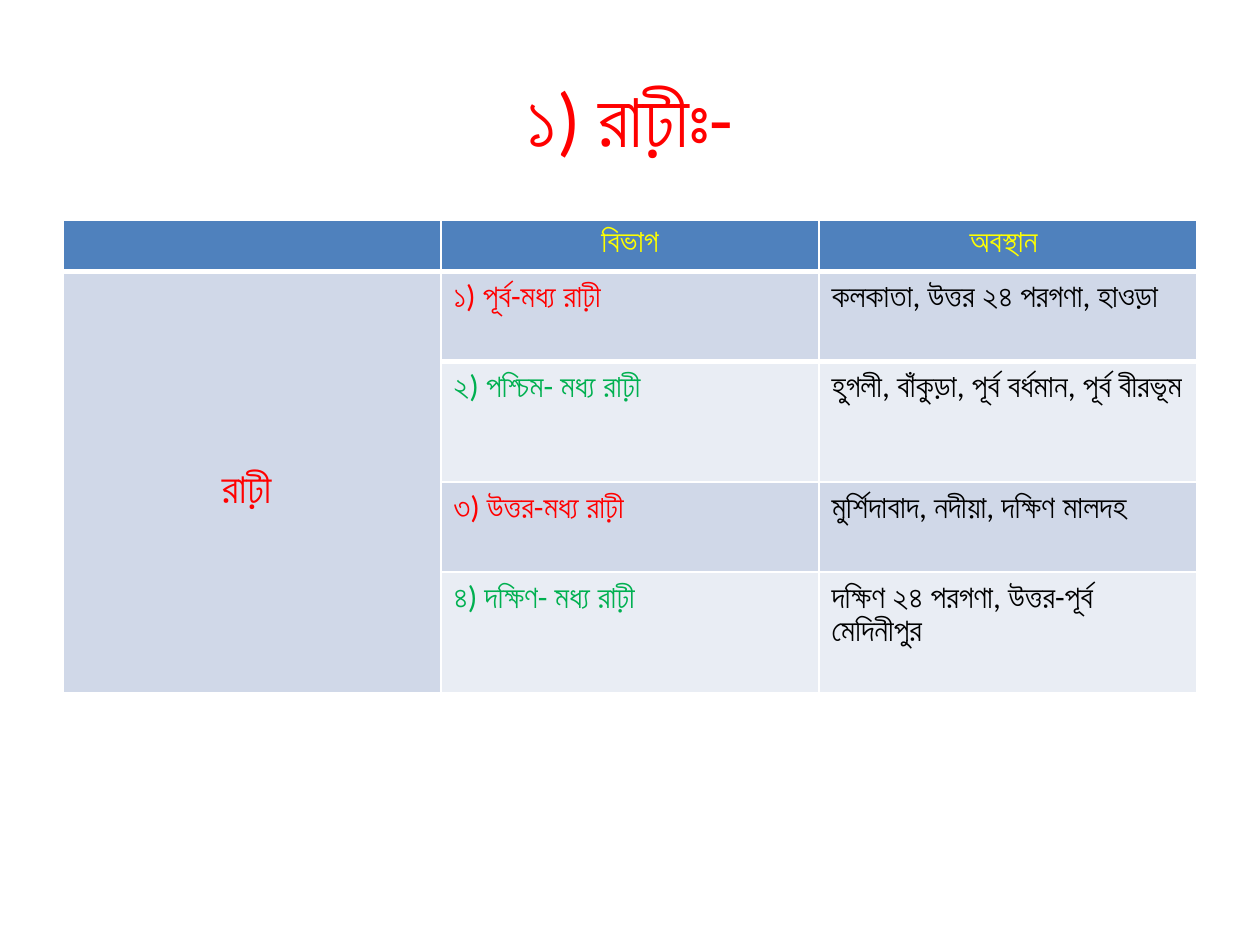
from pptx import Presentation
from pptx.dml.color import RGBColor
from pptx.enum.text import MSO_ANCHOR as Anchor, PP_ALIGN as Align
from pptx.oxml import parse_xml
from pptx.oxml.ns import nsdecls
from pptx.util import Pt

RED = RGBColor(0xFF, 0x00, 0x00)
GREEN = RGBColor(0x00, 0xB0, 0x50)
YELLOW = RGBColor(0xFF, 0xFF, 0x00)
BLACK = RGBColor(0x00, 0x00, 0x00)
WHITE = RGBColor(0xFF, 0xFF, 0xFF)
HEADER_BLUE = RGBColor(0x4F, 0x81, 0xBD)
BANDS = (RGBColor(0xD0, 0xD8, 0xE8), RGBColor(0xE9, 0xED, 0xF4))

LEFT, WIDTH = 36, 648
TABLE_TOP = 126
ROW_HEIGHTS = (29.2, 51.3, 69, 51.3, 69)

# Bengali letters that have a single code point for letter plus nukta
NUKTA = chr(0x09BC)
DOTTED_LETTERS = {chr(0x09A1): chr(0x09DC), chr(0x09A2): chr(0x09DD),
                  chr(0x09AF): chr(0x09DF)}

HEADINGS = ("", "বিভাগ", "অবস্থান ")
DIALECTS = (
    ("১) পূর্ব-মধ্য রাঢ়ী", "কলকাতা, উত্তর ২৪ পরগণা, হাওড়া"),
    ("২) পশ্চিম- মধ্য রাঢ়ী", "হুগলী, বাঁকুড়া, পূর্ব বর্ধমান, পূর্ব বীরভূম"),
    ("৩) উত্তর-মধ্য রাঢ়ী", "মুর্শিদাবাদ, নদীয়া, দক্ষিণ মালদহ"),
    ("৪) দক্ষিণ- মধ্য রাঢ়ী", "দক্ষিণ ২৪ পরগণা, উত্তর-পূর্ব মেদিনীপুর"),
)


def compose(text):
    for letter, dotted in DOTTED_LETTERS.items():
        text = text.replace(letter + NUKTA, dotted)
    return text


def write(frame, text, size=18, color=BLACK, bold=False, align=Align.LEFT):
    paragraph = frame.paragraphs[0]
    paragraph.alignment = align
    run = paragraph.add_run()
    run.text = compose(text)
    font = run.font
    font.name, font.size, font.bold = "Calibri", Pt(size), bold
    font.color.rgb = color


def fill_cell(cell, fill, text="", **text_format):
    cell.fill.solid()
    cell.fill.fore_color.rgb = fill
    if text:
        write(cell.text_frame, text, **text_format)


def add_border(cell, side, points):
    border = parse_xml(
        f'<a:{side} {nsdecls("a")} w="{Pt(points)}"><a:solidFill>'
        f'<a:srgbClr val="{WHITE}"/></a:solidFill></a:{side}>')
    cell._tc.get_or_add_tcPr().insert(0, border)


def add_title(slide, text):
    title = slide.shapes.title
    title.left, title.top = Pt(LEFT), Pt(21.6)
    title.width, title.height = Pt(WIDTH), Pt(90)
    title.text_frame.vertical_anchor = Anchor.MIDDLE
    write(title.text_frame, text, size=44, color=RED, align=Align.CENTER)


def add_dialect_table(slide):
    # The default table style supplies the thin white borders
    table = slide.shapes.add_table(
        len(ROW_HEIGHTS), len(HEADINGS), Pt(LEFT), Pt(TABLE_TOP),
        Pt(WIDTH), Pt(sum(ROW_HEIGHTS))).table
    for row, height in zip(table.rows, ROW_HEIGHTS):
        row.height = Pt(height)

    # Header row, with a thick rule below
    for column, heading in enumerate(HEADINGS):
        fill_cell(table.cell(0, column), HEADER_BLUE, heading,
                  color=YELLOW, bold=True, align=Align.CENTER)
        add_border(table.cell(0, column), "lnB", 3)
        add_border(table.cell(1, column), "lnT", 3)

    # Group name beside all its divisions
    group = table.cell(1, 0)
    group.merge(table.cell(len(DIALECTS), 0))
    fill_cell(group, BANDS[0], "রাঢ়ী ", size=24, color=RED, align=Align.CENTER)
    group.vertical_anchor = Anchor.MIDDLE
    group.margin_top = Pt(13.6)

    # Divisions and their places, in alternating colours
    for index, (division, places) in enumerate(DIALECTS):
        band = BANDS[index % 2]
        fill_cell(table.cell(index + 1, 1), band, division,
                  color=(RED, GREEN)[index % 2])
        fill_cell(table.cell(index + 1, 2), band, places)


def main():
    deck = Presentation()
    deck.slide_width, deck.slide_height = Pt(720), Pt(540)
    slide = deck.slides.add_slide(deck.slide_layouts.get_by_name("Title Only"))
    add_title(slide, "১) রাঢ়ীঃ-")
    add_dialect_table(slide)
    deck.save("out.pptx")


if __name__ == "__main__":
    main()
